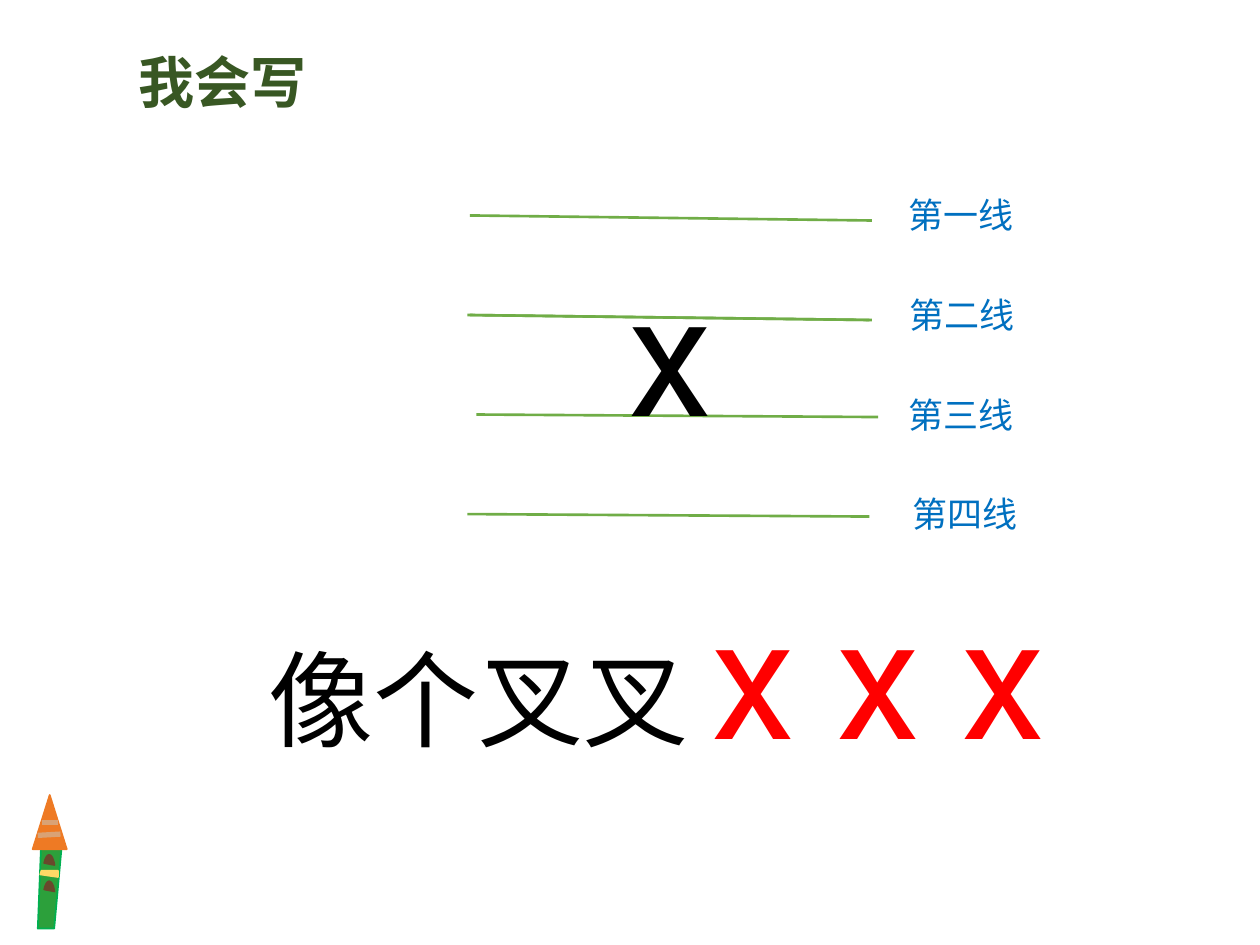
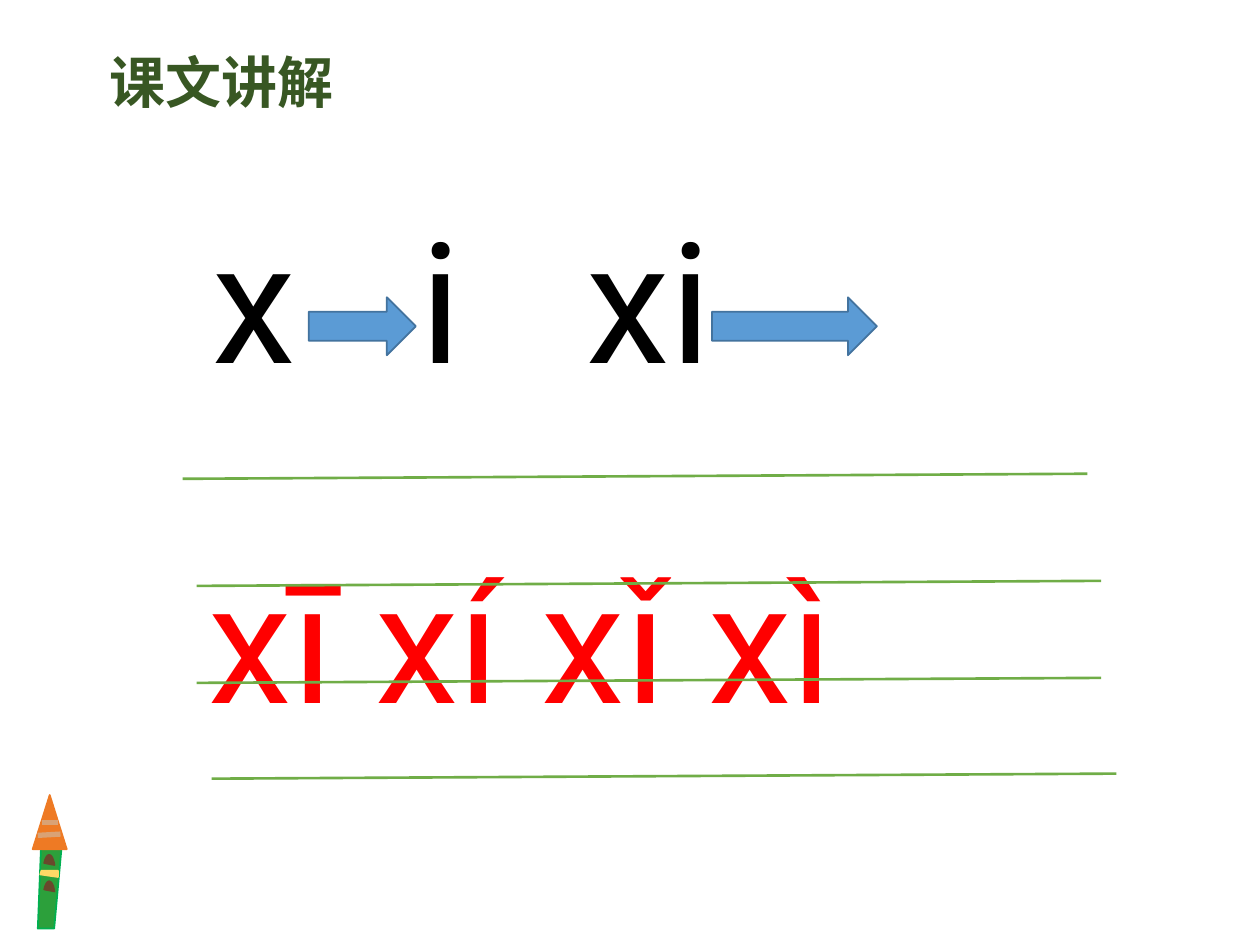
from lxml import etree
from pptx import Presentation
from pptx import util as u
from pptx.dml.color import RGBColor
from pptx.enum import shapes, text
from pptx.oxml.ns import qn

Inches = u.Inches
COLORS = {
    "title": "385723", "label": "0070C0", "black": "000000", "red": "FF0000",
    "rule": "70AD47", "arrow": "5B9BD5", "arrow_edge": "43739E",
    "stem": "2CA03B", "stem_edge": "00B050", "tip": "EE7A24",
    "spot": "69482C", "band": "FFD966", "stripe": "D9A275",
}
CJK, LATIN = "Noto Sans CJK SC", "Roboto"
TITLE = {"size": u.Pt(32), "name": CJK, "bold": True, "color": "title"}
LABEL = {"size": u.Pt(20), "name": CJK, "color": "label"}
PHRASE = {"size": u.Pt(60), "name": CJK, "color": "black"}
LETTER = {"size": u.Pt(96), "name": LATIN, "color": "black"}
RED_LETTER = {**LETTER, "color": "red"}


def rgb(name):
    return RGBColor.from_string(COLORS[name])


class Deck:
    """Holds the shared style and the current slide."""

    def __init__(self):
        self.prs = Presentation()
        self.prs.slide_width, self.prs.slide_height = Inches(10), Inches(7.5)
        self.s = None

    def new_slide(self, title, left, width):
        self.s = self.prs.slides.add_slide(self.prs.slide_layouts[5])
        self.pencil()
        sp = self.s.shapes.title
        sp.left, sp.top, sp.width, sp.height = map(Inches, (left, 0.32, width, 0.64))
        tf = sp.text_frame
        tf.word_wrap = False
        tf.auto_size = text.MSO_AUTO_SIZE.NONE
        tf.vertical_anchor = text.MSO_ANCHOR.MIDDLE
        p = tf.paragraphs[0]
        p.alignment = text.PP_ALIGN.CENTER
        self.run(p, title, TITLE)

    def run(self, p, words, style):
        r = p.add_run()
        r.text = words
        for key, value in style.items():
            if key == "color":
                r.font.color.rgb = rgb(value)
            else:
                setattr(r.font, key, value)
        # East Asian characters take their own font entry
        ea = etree.Element(qn("a:ea"), typeface=style["name"])
        r.font._element.find(qn("a:latin")).addnext(ea)

    def text(self, box, *runs, spacing=None, tabs=()):
        tf = self.s.shapes.add_textbox(*map(Inches, box)).text_frame
        tf.word_wrap = True
        p = tf.paragraphs[0]
        if spacing:
            p.line_spacing = spacing
        if tabs:
            tab_list = etree.SubElement(p._p.get_or_add_pPr(), qn("a:tabLst"))
            for pos in tabs:
                etree.SubElement(tab_list, qn("a:tab"), pos=str(Inches(pos)), algn="l")
        for words, style in runs:
            self.run(p, words, style)

    def paint(self, sp, fill, edge=None):
        sp.shadow.inherit = False
        sp.fill.solid()
        sp.fill.fore_color.rgb = rgb(fill)
        sp.line.color.rgb = rgb(edge or fill)
        sp.line.width = u.Pt(1)

    def shape(self, kind, box, fill, edge=None):
        sp = self.s.shapes.add_shape(kind, *map(Inches, box))
        self.paint(sp, fill, edge)
        return sp

    def outline(self, points, fill, edge=None):
        start, *rest = [tuple(map(Inches, point)) for point in points]
        builder = self.s.shapes.build_freeform(*start)
        builder.add_line_segments(rest, close=True)
        self.paint(builder.convert_to_shape(), fill, edge)

    def line(self, x1, y1, x2, y2, color="rule", width=1.5):
        c = self.s.shapes.add_connector(
            shapes.MSO_CONNECTOR.STRAIGHT, *map(Inches, (x1, y1, x2, y2)))
        c.line.color.rgb = rgb(color)
        c.line.width = u.Pt(width)
        etree.SubElement(c._element.spPr, qn("a:effectLst"))

    def pencil(self):
        self.outline([(0.33, 6.61), (0.49, 6.71), (0.43, 7.37), (0.3, 7.37)],
                     "stem", "stem_edge")
        self.shape(shapes.MSO_SHAPE.ISOSCELES_TRIANGLE, (0.26, 6.31, 0.27, 0.43), "tip")
        for top in (6.87, 7.08):
            spot = self.shape(shapes.MSO_SHAPE.CHORD, (0.26, top, 0.26, 0.09), "spot")
            spot.rotation = 90
            spot.adjustments[0], spot.adjustments[1] = 89.45, 132.13
        self.outline([(0.33, 6.91), (0.46, 6.91), (0.46, 6.96), (0.32, 6.94)], "band")
        self.line(0.33, 6.53, 0.46, 6.53, "stripe", 3)
        self.line(0.3, 6.63, 0.48, 6.62, "stripe", 3)


def writing_slide(deck):
    deck.new_slide("我会写", 0.99, 1.55)
    # Four-line staff, with the second line drawn double
    pitch, length = 0.79, 3.19
    staff = [(3.73, 0, 0.04), (3.73, 1, 0.04), (3.71, 1, 0.04),
             (3.78, 2, 0.02), (3.71, 3, 0.02)]
    for x, row, drop in staff:
        y = 1.71 + row * pitch
        deck.line(x, y, x + length, y + drop)
    deck.text((4.89, 1.92, 2.07, 1.72), ("x", LETTER))
    # Line names
    names = [("第一线", 7.11), ("第二线", 7.12), ("第三线", 7.11), ("第四线", 7.14)]
    for row, (name, x) in enumerate(names):
        deck.text((x, 1.49 + row * pitch, 1.22, 0.77), (name, LABEL))
    # Memory phrase
    deck.text((2.03, 4.49, 7.22, 1.72), ("像个叉叉 ", PHRASE), ("x x x", RED_LETTER))


def lesson_slide(deck):
    deck.new_slide("课文讲解", 0.76, 2)
    # Blending the sounds; the first arrow fits between x and i
    deck.text((1.59, 1.5, 7.38, 1.72), ("x\ti\txi", LETTER), tabs=(1.65, 2.97))
    for x, width in ((2.45, 0.85), (5.65, 1.31)):
        deck.shape(shapes.MSO_SHAPE.RIGHT_ARROW, (x, 2.36, width, 0.46),
                   "arrow", "arrow_edge")
    # Four tones on the staff
    deck.text((1.56, 3.88, 7.67, 2.04), ("xī xí xǐ xì", RED_LETTER), spacing=1.2)
    for x, y in ((1.45, 3.8), (1.56, 4.65), (1.56, 5.42), (1.68, 6.18)):
        deck.line(x, y, x + 7.18, y - 0.04)


def main():
    deck = Deck()
    writing_slide(deck)
    lesson_slide(deck)
    deck.prs.save("out.pptx")


if __name__ == "__main__":
    main()
